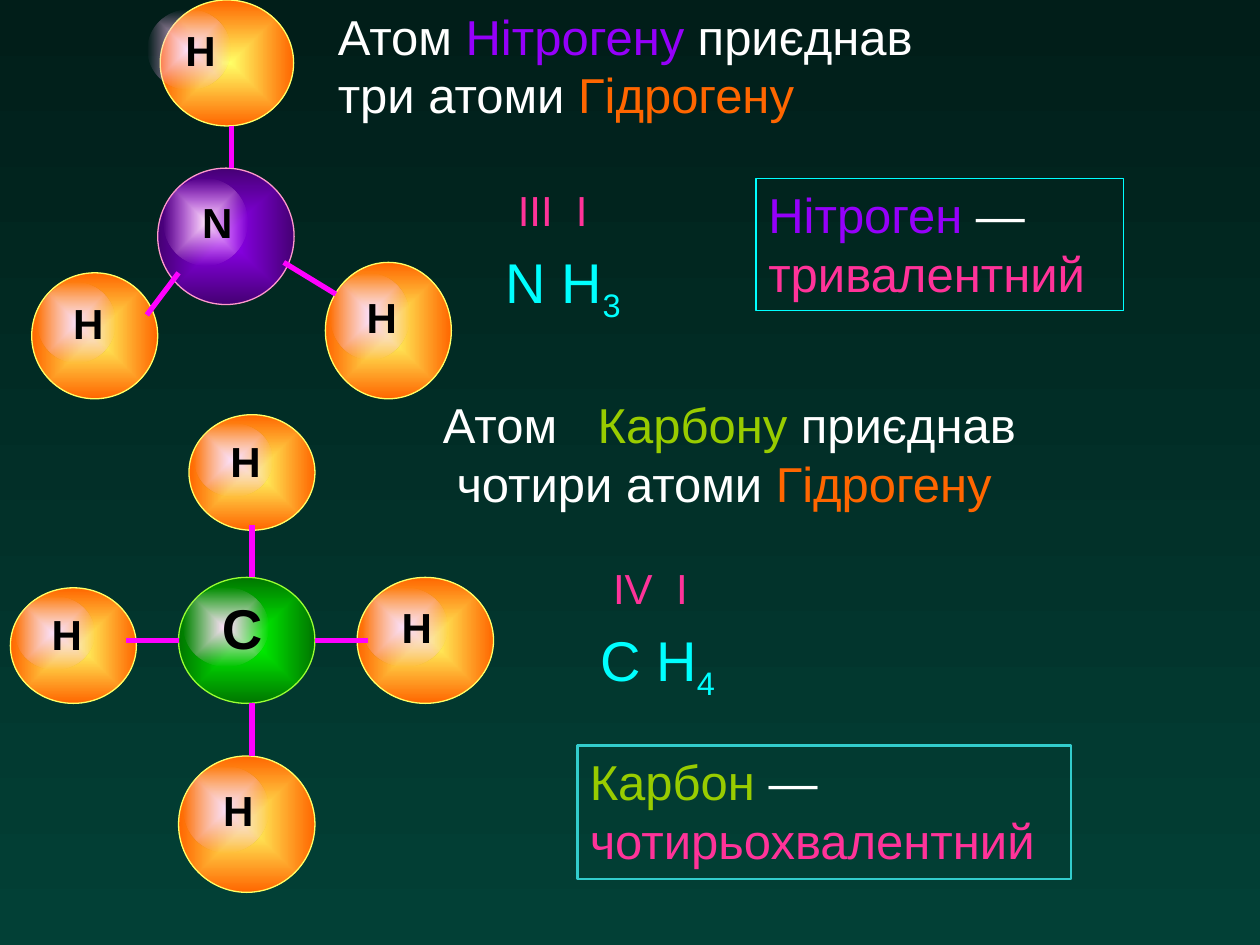
from lxml.etree import SubElement
from pptx import Presentation
from pptx.dml.color import RGBColor as Rgb
from pptx.enum.shapes import MSO_CONNECTOR as Link, MSO_SHAPE as Preset
from pptx.enum.text import MSO_ANCHOR as Anchor, MSO_AUTO_SIZE as Fit, PP_ALIGN as Align
from pptx.oxml.ns import qn
from pptx.util import Cm, Pt

COLORS = {
    "night": "011E19", "teal": "024036", "white": "FFFFFF", "black": "000000",
    "yellow": "FFFF66", "orange": "FF6600", "violet": "9500FA", "plum": "450074",
    "rose": "FF99CC", "green": "00FF00", "forest": "007600", "lime": "99FF33",
    "olive": "99CC00", "shine": "FCDFF8", "glow": "F7A7ED", "bond": "FF00FF",
    "cyan": "00FFFF", "aqua": "33CCCC", "pink": "FF3399",
}
ELEMENTS = {
    "Н": ("yellow", "orange", "yellow", 24),
    "N": ("violet", "plum", "rose", 24),
    "C": ("green", "forest", "lime", 32),
}


class MoleculeSlide:
    """Draws atoms, bonds and captions on one slide in a shared style."""

    def __init__(self, deck, font="Arial"):
        self.font = font
        self.slide = deck.slides.add_slide(deck.slide_layouts[6])
        fill = self.slide.background.fill
        self.blend(fill, "night", "teal")
        fill.gradient_angle = 270

    def color(self, name):
        return Rgb.from_string(COLORS[name])

    def blend(self, fill, start, end):
        fill.gradient()
        for stop, name, position in zip(fill.gradient_stops, (start, end), (0, 1)):
            stop.color.rgb = self.color(name)
            stop.position = position

    def ball(self, group, box, start, end):
        sphere = group.shapes.add_shape(Preset.OVAL, *map(Cm, box))
        sphere.shadow.inherit = False
        self.blend(sphere.fill, start, end)
        gradient = sphere._element.spPr.find(qn("a:gradFill"))
        gradient.remove(gradient.find(qn("a:lin")))
        center = SubElement(gradient, qn("a:path"), {"path": "shape"})
        SubElement(center, qn("a:fillToRect"), {side: "50000" for side in "ltrb"})
        return sphere

    def atom(self, symbol, left, top, width, height, shine_shift=0.11):
        inner, outer, edge, size = ELEMENTS[symbol]
        group = self.slide.shapes.add_group_shape()
        body = self.ball(group, (left, top, width, height), inner, outer)
        body.line.color.rgb = self.color(edge)
        body.line.width = Pt(0.75)
        shine_box = (left + shine_shift, top + 0.08 * height, 0.62 * width, 0.63 * height)
        shine = self.ball(group, shine_box, "shine", "glow")
        shine.line.fill.background()
        fade = shine._element.spPr.findall(".//" + qn("a:srgbClr"))[-1]
        SubElement(fade, qn("a:alpha"), val="0")
        frame = shine.text_frame
        frame.word_wrap = False
        frame.vertical_anchor = Anchor.MIDDLE
        frame.margin_left, frame.margin_right = Cm(0.02 * size), 0
        self.letter(frame, [(symbol, "black")], size, Align.CENTER, bold=True)

    def bond(self, *ends):
        line = self.slide.shapes.add_connector(Link.STRAIGHT, *map(Cm, ends))
        line.line.color.rgb = self.color("bond")
        line.line.width = Pt(3)
        SubElement(line._element.spPr, qn("a:effectLst"))

    def letter(self, frame, parts, size, align=Align.LEFT, bold=False, tab=None):
        paragraph = frame.paragraphs[0]
        paragraph.alignment = align
        if tab:
            stops = SubElement(paragraph._p.get_or_add_pPr(), qn("a:tabLst"))
            SubElement(stops, qn("a:tab"), pos=str(Cm(tab)), algn="l")
        paragraph.font.name = self.font
        paragraph.font.size = Pt(size)
        paragraph.font.bold = bold
        for words, name, *baseline in parts:
            if words == "\n":
                paragraph.add_line_break()
                continue
            run = paragraph.add_run()
            run.text = words
            run.font.color.rgb = self.color(name)
            if baseline:
                run._r.get_or_add_rPr().set("baseline", str(baseline[0] * 1000))

    def caption(self, box, parts, size=28, inset=0.25, tab=None):
        frame = self.slide.shapes.add_textbox(*map(Cm, box)).text_frame
        frame.word_wrap = True
        frame.auto_size = Fit.SHAPE_TO_FIT_TEXT
        frame.margin_left = Cm(inset)
        self.letter(frame, parts, size, tab=tab)

    def conclusion(self, box, edge, weight, parts):
        panel = self.slide.shapes.add_shape(Preset.RECTANGLE, *map(Cm, box))
        panel.shadow.inherit = False
        panel.fill.background()
        panel.line.color.rgb = self.color(edge)
        panel.line.width = Pt(weight)
        frame = panel.text_frame
        frame.word_wrap = True
        frame.auto_size = Fit.SHAPE_TO_FIT_TEXT
        frame.vertical_anchor = Anchor.TOP
        self.letter(frame, parts, 28)


def main():
    deck = Presentation()
    deck.slide_width, deck.slide_height = Cm(25.4), Cm(19.05)
    page = MoleculeSlide(deck)

    page.atom("Н", 0.64, 5.5, 2.54, 2.54)
    page.atom("Н", 3.23, 0, 2.69, 2.54, shine_shift=-0.26)
    for place in (
        (6.56, 5.29, 2.54, 2.75),
        (0.21, 11.85, 2.54, 2.33),
        (3.81, 8.36, 2.54, 2.33),
        (7.2, 11.64, 2.75, 2.54),
        (3.6, 15.24, 2.75, 2.75),
    ):
        page.atom("Н", *place)
    page.atom("N", 3.18, 3.39, 2.75, 2.75)
    page.atom("C", 3.6, 11.64, 2.75, 2.54)

    for ends in (
        (2.96, 6.35, 3.6, 5.5),
        (4.66, 3.39, 4.66, 2.54),
        (5.72, 5.29, 6.77, 5.93),
        (2.54, 12.91, 3.6, 12.91),
        (6.35, 12.91, 7.41, 12.91),
        (5.08, 11.64, 5.08, 10.58),
        (5.08, 15.24, 5.08, 14.18),
    ):
        page.bond(*ends)

    page.caption((6.56, 0, 12.91, 2.62), [
        ("Атом ", "white"), ("Нітрогену", "violet"), (" приєднав ", "white"),
        ("\n", "white"), ("три атоми ", "white"), ("Гідрогену", "orange")])
    page.conclusion((15.24, 3.6, 7.41, 2.66), "cyan", 0.75, [
        ("Нітроген", "violet"), (" ― ", "white"), ("тривалентний", "pink")])
    page.caption((9.95, 3.6, 2.54, 1.27), [("ІІІ\tІ", "pink")], 24, inset=0.49, tab=1.17)
    page.caption((9.95, 4.87, 3.18, 1.6), [("N H", "cyan"), ("3", "cyan", -25)], 32)

    page.caption((8.68, 7.83, 12.91, 2.62), [
        ("Атом\t", "white"), ("Карбону", "olive"), (" приєднав ", "white"),
        ("\n", "white"), (" чотири атоми ", "white"), ("Гідрогену", "orange")], tab=3.12)
    page.conclusion((11.64, 15.03, 9.95, 2.69), "aqua", 1.5, [
        ("Карбон", "olive"), (" ― ", "white"), ("чотирьохвалентний", "pink")])
    page.caption((11.64, 11.22, 3.6, 1.27), [("IV\tІ", "pink")], 24, inset=0.72, tab=1.27)
    page.caption((11.85, 12.49, 3.18, 1.6), [("C H", "cyan"), ("4", "cyan", -25)], 32)

    deck.save("out.pptx")


if __name__ == "__main__":
    main()
